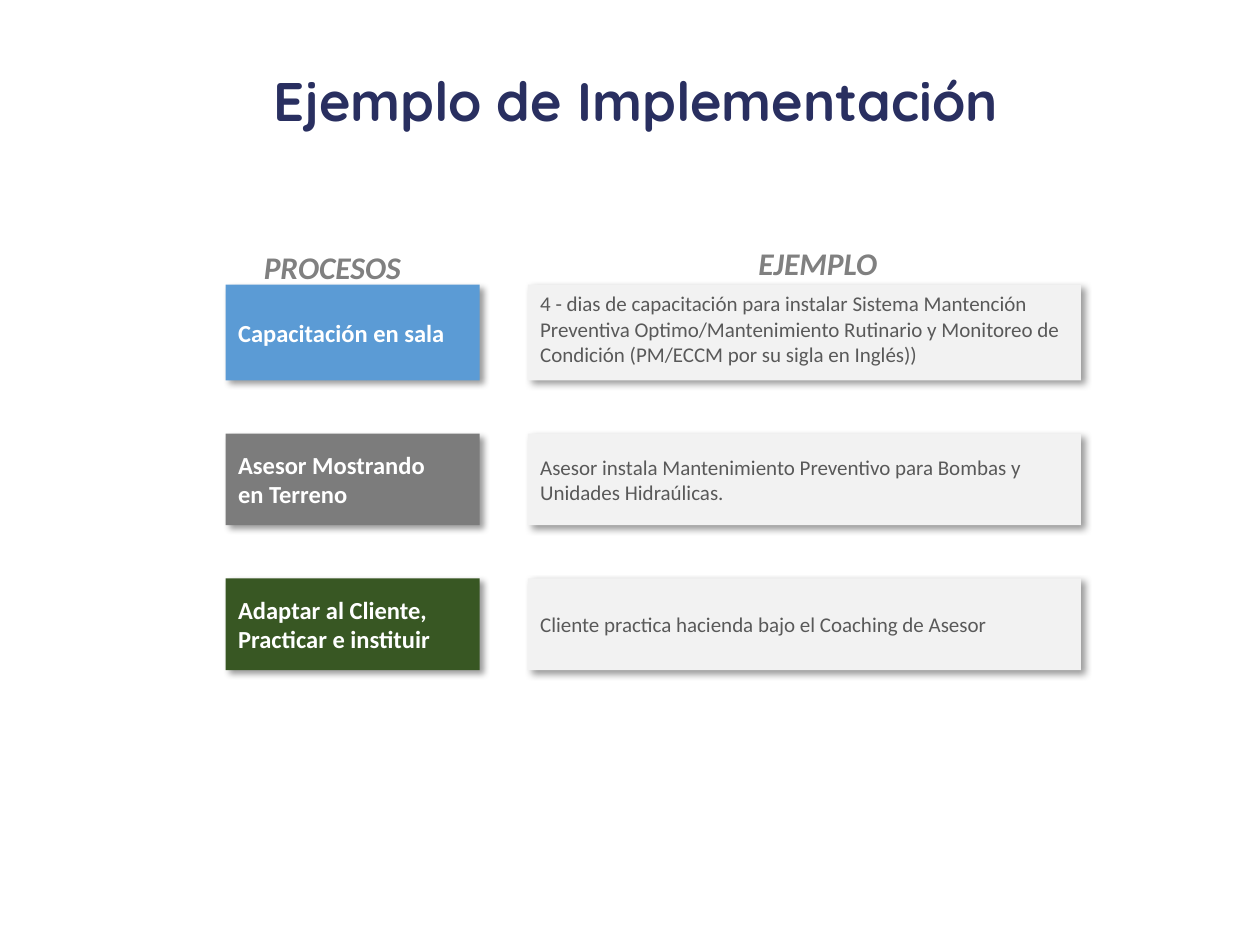
"""Build a slide pairing each implementation process with an example."""
from dataclasses import dataclass

from lxml import etree
from pptx import Presentation
from pptx import util as u
from pptx.dml.color import RGBColor
from pptx.enum import shapes, text
from pptx.oxml import ns


@dataclass(frozen=True)
class Theme:
    title: str = "292F60"
    heading: str = "808080"
    panel: str = "F2F2F2"
    body: str = "595959"
    light: str = "FFFFFF"
    shadow: str = "000000"
    title_font: str = "Quicksand"
    font: str = "Calibri"
    title_size: int = 31
    heading_size: int = 18
    label_size: int = 14
    body_size: int = 12


@dataclass(frozen=True)
class Step:
    label: str
    example: str
    fill: str
    height: float = 1.85
    anchor: text.MSO_ANCHOR = text.MSO_ANCHOR.MIDDLE


@dataclass(frozen=True)
class Heading:
    label: str
    left: float
    top: float
    width: float


T = Theme()
LABEL_LEFT, LABEL_WIDTH = 4.55, 5.12
EXAMPLE_LEFT, EXAMPLE_WIDTH = 10.64, 11.15
FIRST_BOTTOM, PITCH = 7.67, 2.92

STEPS = [
    Step("Capacitación en sala",
         "4 - dias de capacitación para instalar Sistema Mantención Preventiva "
         "Optimo/Mantenimiento Rutinario y Monitoreo de Condición "
         "(PM/ECCM por su sigla en Inglés))",
         "5B9BD5", 1.93, text.MSO_ANCHOR.TOP),
    Step("Asesor Mostrando\nen Terreno",
         "Asesor instala Mantenimiento Preventivo para Bombas y "
         "Unidades Hidraúlicas.",
         "7C7C7C"),
    Step("Adaptar al Cliente,\nPracticar e instituir",
         "Cliente practica hacienda bajo el Coaching de Asesor",
         "385723"),
]
HEADINGS = [Heading("EJEMPLO", 15.01, 4.8, 2.95),
            Heading("PROCESOS", 5.05, 4.88, 3.3)]


def write(sp, content: str, *, size: int, color: str, font: str = T.font,
          bold: bool = False, italic: bool = False, wrap: bool = True,
          align=text.PP_ALIGN.LEFT, anchor=text.MSO_ANCHOR.MIDDLE,
          spacing: float = 1.0) -> None:
    """Fill a shape with formatted paragraphs, one per line of content."""
    tf = sp.text_frame
    tf.word_wrap = wrap
    tf.vertical_anchor = anchor
    tf.text = content
    for p in tf.paragraphs:
        p.alignment = align
        p.line_spacing = spacing
        for r in p.runs:
            r.font.name = font
            r.font.size = u.Pt(size)
            r.font.bold = bold
            r.font.italic = italic
            r.font.color.rgb = RGBColor.from_string(color)


def add_shadow(sp) -> None:
    """Give a shape a soft shadow towards the lower right."""
    sp.shadow.inherit = False
    effects = sp._element.spPr.find(ns.qn("a:effectLst"))
    shadow = etree.SubElement(effects, ns.qn("a:outerShdw"), blurRad=str(u.Pt(4)),
                              dist=str(u.Pt(3)), dir=str(45 * 60000),
                              algn="tl", rotWithShape="0")
    color = etree.SubElement(shadow, ns.qn("a:srgbClr"), val=T.shadow)
    etree.SubElement(color, ns.qn("a:alpha"), val="40000")


def add_box(s, left: float, top: float, width: float, height: float, fill: str):
    """Add a filled rectangle with a shadow and no outline."""
    sp = s.shapes.add_shape(shapes.MSO_SHAPE.RECTANGLE, u.Cm(left), u.Cm(top),
                            u.Cm(width), u.Cm(height))
    sp.fill.solid()
    sp.fill.fore_color.rgb = RGBColor.from_string(fill)
    sp.line.fill.background()
    add_shadow(sp)
    return sp


def add_step(s, step: Step, bottom: float) -> None:
    """Draw a process box and its example on one row."""
    top = bottom - step.height
    sp = add_box(s, LABEL_LEFT, top, LABEL_WIDTH, step.height, step.fill)
    write(sp, step.label, size=T.label_size, color=T.light, bold=True)
    sp = add_box(s, EXAMPLE_LEFT, top, EXAMPLE_WIDTH, step.height, T.panel)
    write(sp, step.example, size=T.body_size, color=T.body, anchor=step.anchor)


def add_heading(s, heading: Heading) -> None:
    """Draw a column heading."""
    sp = s.shapes.add_textbox(u.Cm(heading.left), u.Cm(heading.top),
                              u.Cm(heading.width), u.Cm(1.02))
    write(sp, heading.label, size=T.heading_size, color=T.heading, bold=True,
          italic=True, wrap=False, align=text.PP_ALIGN.CENTER,
          anchor=text.MSO_ANCHOR.TOP)


def main() -> None:
    """Build and save the slide."""
    prs = Presentation()
    prs.slide_width, prs.slide_height = u.Cm(25.4), u.Cm(19.05)
    s = prs.slides.add_slide(prs.slide_layouts[6])
    title = s.shapes.add_textbox(u.Cm(5.26), u.Cm(0.76), u.Cm(18.95), u.Cm(2.69))
    write(title, "Ejemplo de Implementación", size=T.title_size, color=T.title,
          font=T.title_font, bold=True, spacing=0.9)
    for i, step in enumerate(STEPS):
        add_step(s, step, FIRST_BOTTOM + i * PITCH)
    for heading in HEADINGS:
        add_heading(s, heading)
    prs.save("out.pptx")


if __name__ == "__main__":
    main()
